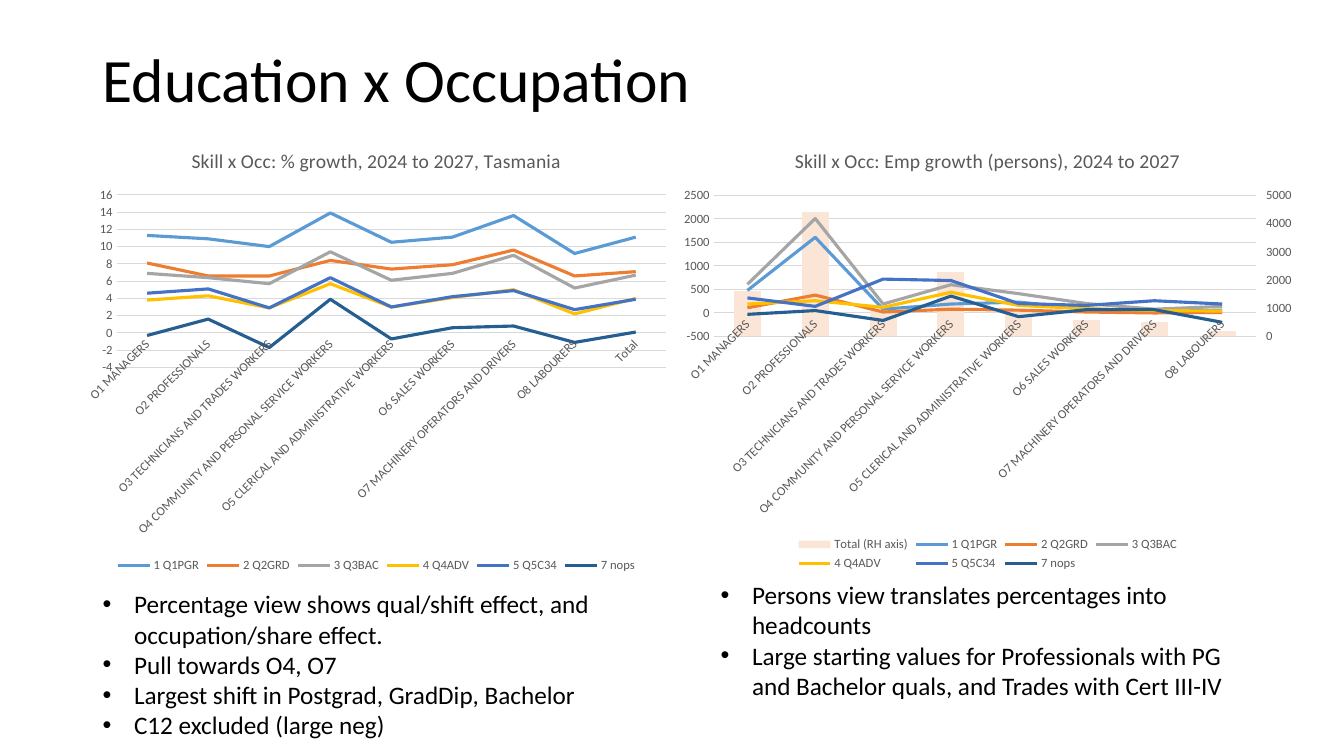
from pptx import Presentation
from pptx.chart.data import CategoryChartData
from pptx.dml.color import RGBColor
from pptx.enum.chart import XL_CHART_TYPE, XL_LEGEND_POSITION, XL_MARKER_STYLE, XL_TICK_MARK
from pptx.enum.text import MSO_ANCHOR
from pptx.oxml import parse_xml
from pptx.oxml.ns import nsdecls, qn
from pptx.util import Pt

FONT = "Calibri"
HUES = {
    "text": "000000", "label": "595959", "grid": "D9D9D9", "Total (RH axis)": "FBE5D6",
    "1 Q1PGR": "5B9BD5", "2 Q2GRD": "ED7D31", "3 Q3BAC": "A5A5A5",
    "4 Q4ADV": "FFC000", "5 Q5C34": "4472C4", "7 nops": "255E91",
}
JOBS = [
    "O1 MANAGERS", "O2 PROFESSIONALS", "O3 TECHNICIANS AND TRADES WORKERS",
    "O4 COMMUNITY AND PERSONAL SERVICE WORKERS",
    "O5 CLERICAL AND ADMINISTRATIVE WORKERS", "O6 SALES WORKERS",
    "O7 MACHINERY OPERATORS AND DRIVERS", "O8 LABOURERS",
]
RATES = {
    "1 Q1PGR": [11.3, 10.9, 10, 13.9, 10.5, 11.1, 13.6, 9.2, 11.1],
    "2 Q2GRD": [8.1, 6.6, 6.6, 8.4, 7.4, 7.9, 9.6, 6.6, 7.1],
    "3 Q3BAC": [6.9, 6.4, 5.7, 9.4, 6.1, 6.9, 9, 5.2, 6.7],
    "4 Q4ADV": [3.8, 4.3, 2.9, 5.7, 3, 4.1, 5, 2.2, 4],
    "5 Q5C34": [4.6, 5.1, 2.9, 6.4, 3, 4.2, 4.9, 2.7, 3.9],
    "7 nops": [-0.3, 1.6, -1.7, 3.9, -0.7, 0.6, 0.8, -1.1, 0.1],
}
HEADS = {
    "Total (RH axis)": [1600, 4400, 900, 2300, 900, 600, 500, 200],
    "1 Q1PGR": [480, 1610, 80, 190, 230, 90, 30, 60],
    "2 Q2GRD": [110, 380, 20, 80, 60, 20, 0, 10],
    "3 Q3BAC": [610, 2010, 190, 600, 410, 200, 80, 140],
    "4 Q4ADV": [190, 260, 120, 440, 160, 90, 50, 40],
    "5 Q5C34": [320, 140, 720, 690, 200, 160, 260, 190],
    "7 nops": [-30, 50, -160, 360, -80, 70, 70, -200],
}

deck = Presentation()
deck.slide_width, deck.slide_height = Pt(960), Pt(540)
slide = deck.slides.add_slide(deck.slide_layouts[6])


def style(font, size, hue):
    font.name, font.size, font.bold = FONT, Pt(size), False
    font.color.rgb = RGBColor.from_string(HUES[hue])


def draw(kind, title, cats, rows, place, scale):
    data = CategoryChartData()
    data.categories = cats
    for name, vals in rows.items():
        data.add_series(name, vals)
    chart = slide.shapes.add_chart(kind, *[Pt(n) for n in place], data).chart
    style(chart.font, 10, "text")
    chart.has_title = True
    run = chart.chart_title.text_frame.paragraphs[0].add_run()
    run.text = title
    style(run.font, 14, "label")
    chart.has_legend = True
    chart.legend.position = XL_LEGEND_POSITION.BOTTOM
    chart.legend.include_in_layout = False
    style(chart.legend.font, 9, "label")
    chart.plots[0].vary_by_categories = False
    base, side = chart.category_axis, chart.value_axis
    for axis in (base, side):
        axis.major_tick_mark = axis.minor_tick_mark = XL_TICK_MARK.NONE
        style(axis.tick_labels.font, 9, "label")
    side.minimum_scale, side.maximum_scale, side.major_unit = scale
    side.tick_labels.number_format = "0"
    side.tick_labels.number_format_is_linked = False
    side.format.line.fill.background()
    side.has_major_gridlines = True
    for line in (base.format.line, side.major_gridlines.format.line):
        line.color.rgb = RGBColor.from_string(HUES["grid"])
        line.width = Pt(0.75)
    chart._chartSpace.xpath(".//c:catAx/c:txPr/a:bodyPr")[0].set("rot", "-2700000")
    return chart


rate = draw(XL_CHART_TYPE.LINE, "Skill x Occ: % growth, 2024 to 2027, Tasmania",
            JOBS + ["Total"], RATES, (53.3, 92.2, 431.3, 319.7), (-4, 16, 2))
head = draw(XL_CHART_TYPE.COLUMN_CLUSTERED, "Skill x Occ: Emp growth (persons), 2024 to 2027",
            JOBS, HEADS, (479.5, 92.2, 452.2, 318.2), (-500, 2500, 500))

bars = head._chartSpace.xpath(".//c:barChart")[0]
ids = bars.findall(qn("c:axId"))
lines = parse_xml(
    f'<c:lineChart {nsdecls("c")}><c:grouping val="standard"/><c:varyColors val="0"/>'
    '<c:marker val="1"/>' + "".join(f'<c:axId val="{i.get("val")}"/>' for i in ids)
    + "</c:lineChart>")
bars.addnext(lines)
mark = lines.find(qn("c:marker"))
for ser in bars.findall(qn("c:ser"))[1:]:
    for flag in ser.findall(qn("c:invertIfNegative")):
        ser.remove(flag)
    mark.addprevious(ser)
for item, num in zip(ids, ("11", "12")):
    item.set("val", num)

right = parse_xml(
    f'<c:valAx {nsdecls("c", "a")}><c:axId val="12"/><c:scaling><c:orientation val="minMax"/>'
    '<c:max val="5000"/><c:min val="0"/></c:scaling><c:delete val="0"/><c:axPos val="r"/>'
    '<c:numFmt formatCode="0" sourceLinked="0"/><c:majorTickMark val="out"/>'
    '<c:minorTickMark val="none"/><c:tickLblPos val="nextTo"/>'
    '<c:spPr><a:ln><a:noFill/></a:ln></c:spPr><c:txPr><a:bodyPr/><a:p><a:pPr>'
    f'<a:defRPr sz="900" b="0"><a:solidFill><a:srgbClr val="{HUES["label"]}"/></a:solidFill>'
    f'<a:latin typeface="{FONT}"/></a:defRPr></a:pPr></a:p></c:txPr><c:crossAx val="11"/>'
    '<c:crosses val="max"/><c:crossBetween val="between"/><c:majorUnit val="1000"/></c:valAx>')
under = parse_xml(
    f'<c:catAx {nsdecls("c")}><c:axId val="11"/><c:scaling><c:orientation val="minMax"/>'
    '</c:scaling><c:delete val="1"/><c:axPos val="b"/><c:majorTickMark val="none"/>'
    '<c:minorTickMark val="none"/><c:tickLblPos val="nextTo"/><c:crossAx val="12"/>'
    '<c:crosses val="autoZero"/></c:catAx>')
left = head._chartSpace.xpath(".//c:valAx")[0]
left.addnext(right)
right.addnext(under)

cols = head.plots[0]
cols.gap_width = 150
fill = cols.series[0].format.fill
fill.solid()
fill.fore_color.rgb = RGBColor.from_string(HUES["Total (RH axis)"])
for plot in (rate.plots[0], head.plots[1]):
    for ser in plot.series:
        ser.smooth = False
        ser.marker.style = XL_MARKER_STYLE.NONE
        ser.format.line.color.rgb = RGBColor.from_string(HUES[ser.name])
        ser.format.line.width = Pt(2.25)

TEXTS = [
    ((66.2, 28.8, 828, 60.5), 44, ["Education x Occupation"]),
    ((66.2, 416.9, 393.1, 116.6), 18, [
        "Percentage view shows qual/shift effect, and occupation/share effect.",
        "Pull towards O4, O7",
        "Largest shift in Postgrad, GradDip, Bachelor",
        "C12 excluded (large neg)"]),
    ((507.6, 410.4, 393.1, 94.3), 18, [
        "Persons view translates percentages into headcounts",
        "Large starting values for Professionals with PG and Bachelor quals, "
        "and Trades with Cert III-IV"]),
]
for place, size, notes in TEXTS:
    frame = slide.shapes.add_textbox(*[Pt(n) for n in place]).text_frame
    frame.word_wrap = True
    for i, note in enumerate(notes):
        para = frame.paragraphs[0] if i == 0 else frame.add_paragraph()
        run = para.add_run()
        run.text = note
        style(run.font, size, "text")
        if size == 44:
            frame.vertical_anchor = MSO_ANCHOR.MIDDLE
            para.line_spacing = 0.9
        else:
            props = para._p.get_or_add_pPr()
            props.set("marL", str(Pt(22.5)))
            props.set("indent", str(-Pt(22.5)))
            props.append(parse_xml(f'<a:buFont {nsdecls("a")} typeface="Arial"/>'))
            props.append(parse_xml(f'<a:buChar {nsdecls("a")} char="•"/>'))

deck.save("out.pptx")
